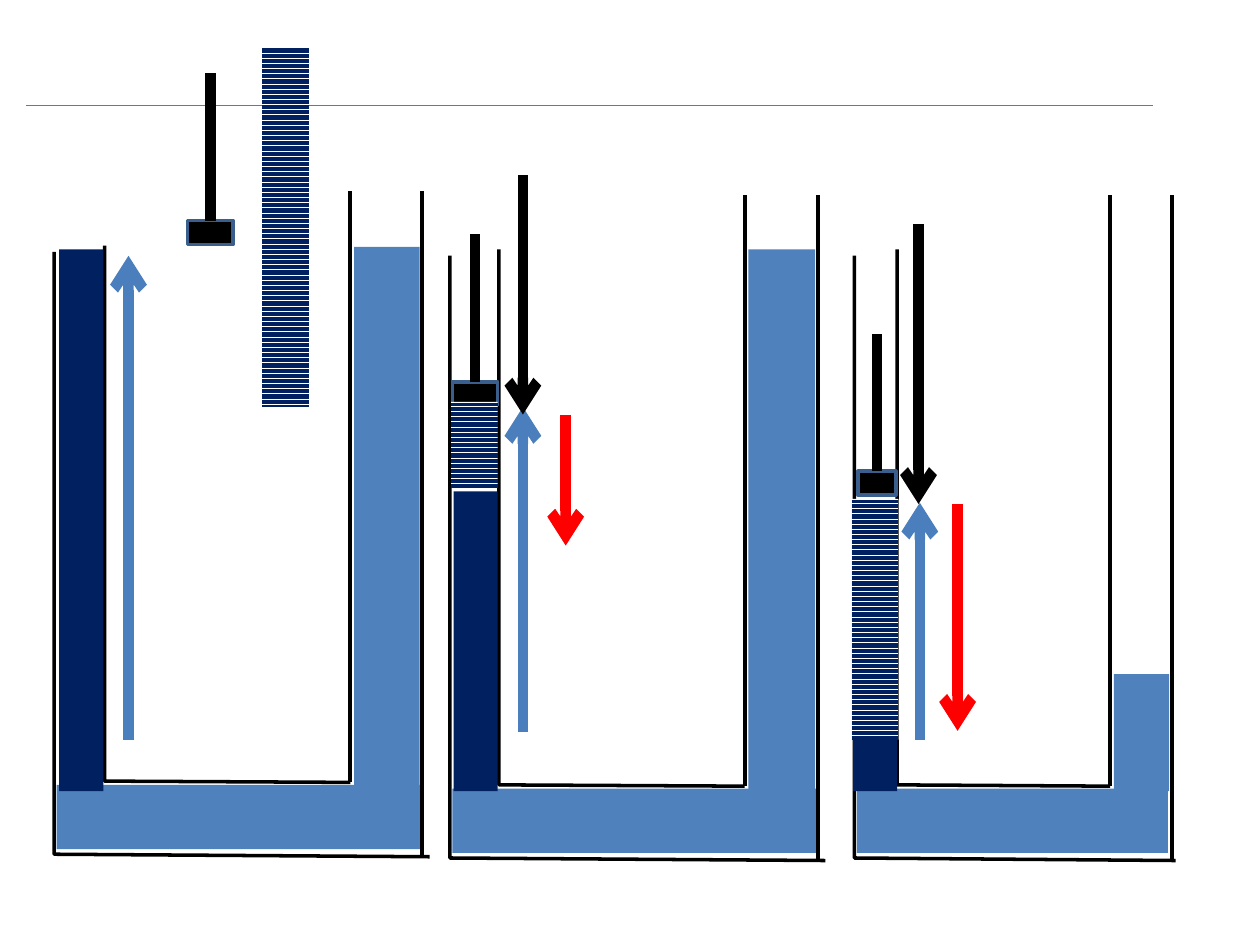
from lxml.etree import SubElement
from pptx import Presentation
from pptx.dml.color import RGBColor
from pptx.enum.dml import MSO_PATTERN
from pptx.enum.shapes import MSO_CONNECTOR as LINK, MSO_SHAPE as SHAPE
from pptx.oxml.ns import qn
from pptx.util import Pt

PX = 9144  # 100 px to the inch
WHITE = RGBColor(0xFF, 0xFF, 0xFF)
BLACK = RGBColor(0x00, 0x00, 0x00)
RED = RGBColor(0xFF, 0x00, 0x00)
NAVY = RGBColor(0x00, 0x20, 0x60)
WATER = RGBColor(0x4F, 0x81, 0xBD)
BLUE = RGBColor(0x4B, 0x7E, 0xBC)
EDGE = RGBColor(0x3A, 0x5F, 0x8C)


class Sketch:
    """Holds the slide and line weights, and draws each kind of element."""

    thin, wall, side, bold = 0.75, 2, 2.25, 6

    def __init__(self, slide):
        self.shapes = slide.shapes

    def box(self, x, y, w, h, color):
        box = self.shapes.add_shape(SHAPE.RECTANGLE, x * PX, y * PX, w * PX, h * PX)
        box.shadow.inherit = False
        box.fill.solid()
        box.fill.fore_color.rgb = color
        box.line.fill.background()
        return box

    def stripes(self, x, y, w, h):
        fill = self.box(x, y, w, h, NAVY).fill
        fill.patterned()
        fill.pattern = MSO_PATTERN.DARK_HORIZONTAL
        fill.fore_color.rgb = NAVY
        fill.back_color.rgb = WHITE

    def line(self, x1, y1, x2, y2, color, width):
        line = self.shapes.add_connector(LINK.STRAIGHT, x1 * PX, y1 * PX, x2 * PX, y2 * PX)
        line.line.color.rgb = color
        line.line.width = Pt(width)
        SubElement(line._element.spPr, qn("a:effectLst"))
        return line

    def arrow(self, x, start, end, color):
        line = self.line(x, start, x, end, color, self.bold)
        SubElement(line.line._get_or_add_ln(), qn("a:tailEnd"), type="arrow")

    def bend(self, start, *points):
        form = self.shapes.build_freeform(*start, scale=PX)
        form.add_line_segments(points, close=False)
        bend = form.convert_to_shape()
        bend.shadow.inherit = False
        bend.fill.background()
        bend.line.color.rgb = BLACK
        bend.line.width = Pt(self.wall)

    def piston(self, x, y, w, top):
        """Draw a block with its rod reaching up to top."""
        head = self.box(x, y, w, 19, BLACK)
        head.line.color.rgb = EDGE
        head.line.width = Pt(self.wall)
        mid = x + w // 2
        rod = self.line(mid, y, mid, top, BLACK, self.bold)
        rod.begin_connect(head, 0)

    def tube(self, left, neck, bore, wall, end, level, rise=0):
        """Draw a U-shaped tube: its x edges, water level and upward shift."""
        floor, base, top = 624 - rise, 683 - rise, 155 - rise
        self.box(left + 2, floor + 2, end - left - 8, 51, WATER)
        self.bend((end, base), (left, base - 2), (left, 203 - rise))
        self.bend((bore, floor), (neck, floor - 1), (neck, 198 - rise))
        self.line(bore, floor, bore, top, BLACK, self.side)
        self.line(wall, base, wall, top, BLACK, self.side)
        self.box(bore + 3, level, wall - bore - 5, floor + 4 - level, WATER)


def main():
    deck = Presentation()
    deck.slide_width, deck.slide_height = 1000 * PX, 750 * PX
    art = Sketch(deck.slides.add_slide(deck.slide_layouts[6]))

    art.line(21, 84, 915, 84, BLUE, art.thin)
    art.tube(43, 83, 278, 335, 341, 196, rise=3)
    art.tube(357, 396, 591, 649, 655, 198)
    art.tube(678, 712, 881, 930, 933, 535)

    for x, y, w, top in ((149, 175, 36, 58), (359, 303, 36, 186), (681, 374, 30, 265)):
        art.piston(x, y, w, top)

    for x, start, end, color in (
        (102, 587, 203, BLUE),
        (415, 581, 323, BLUE),
        (415, 139, 329, BLACK),
        (449, 329, 433, RED),
        (730, 587, 399, BLUE),
        (729, 178, 400, BLACK),
        (760, 400, 580, RED),
    ):
        art.arrow(x, start, end, color)

    for x, top in ((47, 198), (360, 390), (677, 442)):
        art.box(x, top, 35, 628 - top, NAVY)
    for x, y, h in ((208, 37, 286), (358, 319, 68), (676, 396, 191)):
        art.stripes(x, y, 37, h)

    deck.save("out.pptx")


if __name__ == "__main__":
    main()
